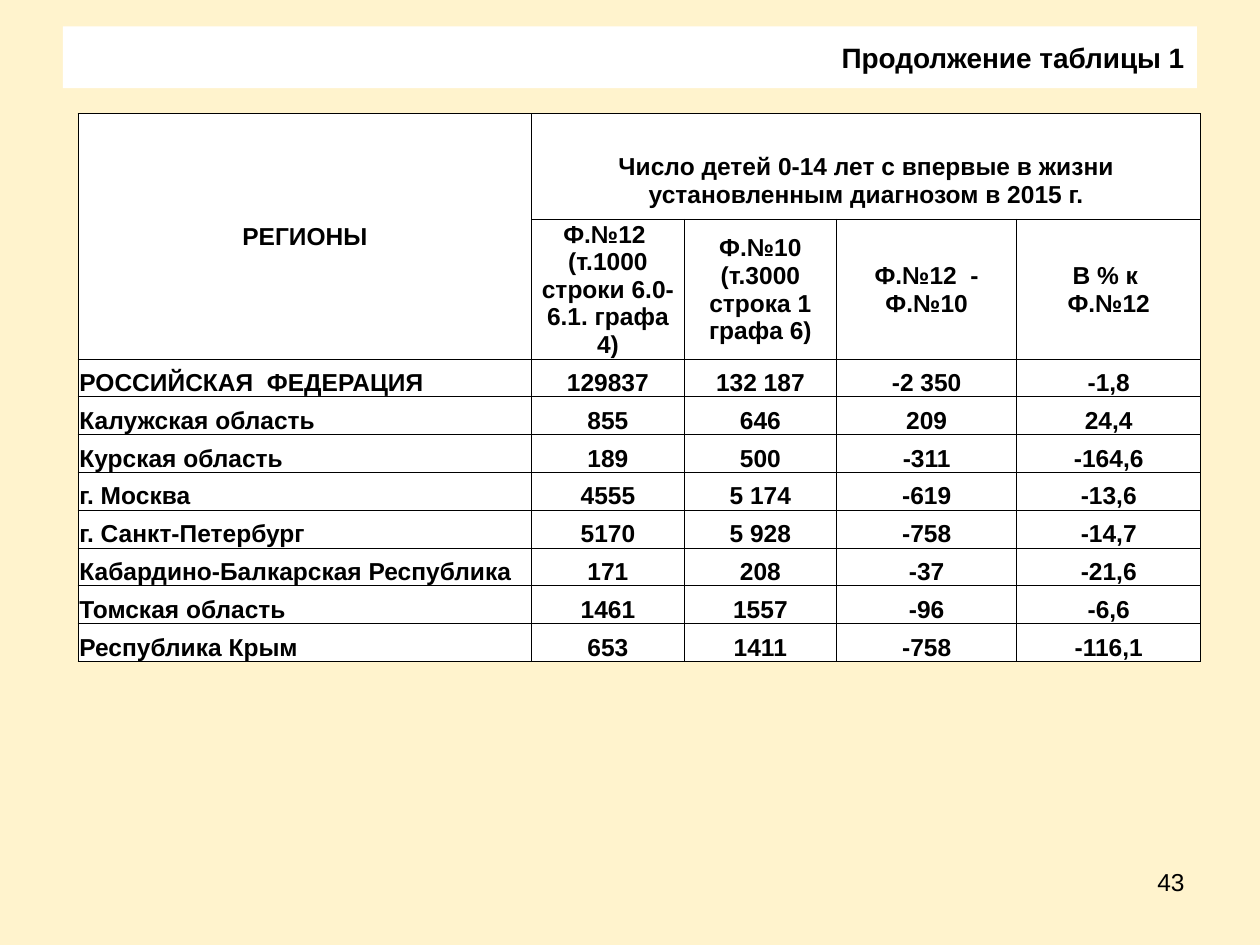
import dataclasses

import lxml.etree
import pptx
import pptx.dml.color
import pptx.enum.shapes
import pptx.enum.text
import pptx.oxml.ns
import pptx.util

ALIGN = pptx.enum.text.PP_ALIGN
ANCHOR = pptx.enum.text.MSO_ANCHOR


@dataclasses.dataclass(frozen=True)
class Theme:
    background: str = "FFF3CD"
    panel: str = "FFFFFF"
    ink: str = "000000"
    font: str = "Arial"
    title_size: int = 16
    body_size: int = 14
    border_width: float = 0.5


THEME = Theme()
GRID_COLUMNS, GRID_ROWS = 100, 75
PAGE_WIDTH, PAGE_HEIGHT = pptx.util.Inches(10), pptx.util.Inches(7.5)

COLUMN_WIDTHS = [36, 12.1, 12.1, 14.3, 14.6]
HEADER_HEIGHTS = [8.4, 11.1]
REGION_HEIGHT = 3

GROUP_HEADING = "Число детей 0-14 лет с впервые в жизни установленным диагнозом в 2015 г."
COLUMN_HEADINGS = [
    "Ф.№12 \n(т.1000 строки 6.0-6.1. графа 4)",
    "Ф.№10\n(т.3000 строка 1 графа 6)",
    "Ф.№12  -\nФ.№10",
    "В % к \nФ.№12",
]
REGIONS = [
    ["РОССИЙСКАЯ  ФЕДЕРАЦИЯ", "129837", "132 187", "-2 350", "-1,8"],
    ["Калужская область", "855", "646", "209", "24,4"],
    ["Курская область", "189", "500", "-311", "-164,6"],
    ["г. Москва", "4555", "5 174", "-619", "-13,6"],
    ["г. Санкт-Петербург", "5170", "5 928", "-758", "-14,7"],
    ["Кабардино-Балкарская Республика", "171", "208", "-37", "-21,6"],
    ["Томская область", "1461", "1557", "-96", "-6,6"],
    ["Республика Крым", "653", "1411", "-758", "-116,1"],
]


def across(columns):
    return round(PAGE_WIDTH * columns / GRID_COLUMNS)


def down(rows):
    return round(PAGE_HEIGHT * rows / GRID_ROWS)


def place(box):
    left, top, width, height = box
    return across(left), down(top), across(width), down(height)


def color(value):
    return pptx.dml.color.RGBColor.from_string(value)


def paint(fill, value):
    fill.solid()
    fill.fore_color.rgb = color(value)


def write(frame, text, size=THEME.body_size, bold=True, align=ALIGN.CENTER):
    frame.word_wrap = True
    for index, line in enumerate(text.split("\n")):
        para = frame.add_paragraph() if index else frame.paragraphs[0]
        para.alignment = align
        span = para.add_run()
        span.text = line
        span.font.name = THEME.font
        span.font.size = pptx.util.Pt(size)
        span.font.bold = bold
        span.font.color.rgb = color(THEME.ink)


def add_borders(cell):
    properties = cell._tc.get_or_add_tcPr()
    name = pptx.oxml.ns.qn
    for side in ("a:lnL", "a:lnR", "a:lnT", "a:lnB"):
        line = lxml.etree.SubElement(properties, name(side))
        line.set("w", str(pptx.util.Pt(THEME.border_width)))
        fill = lxml.etree.SubElement(line, name("a:solidFill"))
        lxml.etree.SubElement(fill, name("a:srgbClr")).set("val", THEME.ink)


def format_cell(cell, anchor):
    add_borders(cell)
    paint(cell.fill, THEME.panel)
    cell.vertical_anchor = anchor
    cell.margin_left = cell.margin_right = cell.margin_top = across(0.1)
    cell.margin_bottom = 0


def add_title(page, box):
    banner = page.shapes.add_shape(
        pptx.enum.shapes.MSO_SHAPE.RECTANGLE, *place(box)
    )
    banner.shadow.inherit = False
    paint(banner.fill, THEME.panel)
    banner.line.fill.background()
    banner.text_frame.vertical_anchor = ANCHOR.MIDDLE
    write(banner.text_frame, "Продолжение таблицы 1",
          size=THEME.title_size, align=ALIGN.RIGHT)


def add_region_table(page, box):
    heights = HEADER_HEIGHTS + [REGION_HEIGHT] * len(REGIONS)
    table = page.shapes.add_table(
        len(heights), len(COLUMN_WIDTHS), *place(box)
    ).table
    table.first_row = table.horz_banding = False
    for column, width in zip(table.columns, COLUMN_WIDTHS):
        column.width = across(width)
    for row, height in zip(table.rows, heights):
        row.height = down(height)

    contents = [
        ["РЕГИОНЫ", GROUP_HEADING, "", "", ""],
        ["", *COLUMN_HEADINGS],
        *REGIONS,
    ]
    for row, texts in enumerate(contents):
        is_header = row < len(HEADER_HEIGHTS)
        for column, text in enumerate(texts):
            cell = table.cell(row, column)
            format_cell(cell, ANCHOR.MIDDLE if is_header else ANCHOR.BOTTOM)
            if text:
                align = ALIGN.CENTER if is_header or column else ALIGN.LEFT
                write(cell.text_frame, text, align=align)

    table.cell(0, 0).merge(table.cell(1, 0))
    table.cell(0, 1).merge(table.cell(0, 4))
    table.cell(0, 1).margin_top = down(2.3)


def add_page_number(page, box):
    number = page.shapes.add_textbox(*place(box))
    write(number.text_frame, "43", bold=False, align=ALIGN.RIGHT)


def main():
    deck = pptx.Presentation()
    deck.slide_width, deck.slide_height = PAGE_WIDTH, PAGE_HEIGHT
    page = deck.slides.add_slide(deck.slide_layouts[6])
    paint(page.background.fill, THEME.background)
    add_title(page, (5, 2.1, 90, 4.9))
    table_height = sum(HEADER_HEIGHTS) + REGION_HEIGHT * len(REGIONS)
    add_region_table(page, (6.2, 9, sum(COLUMN_WIDTHS), table_height))
    add_page_number(page, (71.7, 68.3, 23.3, 5.2))
    deck.save("out.pptx")


if __name__ == "__main__":
    main()
